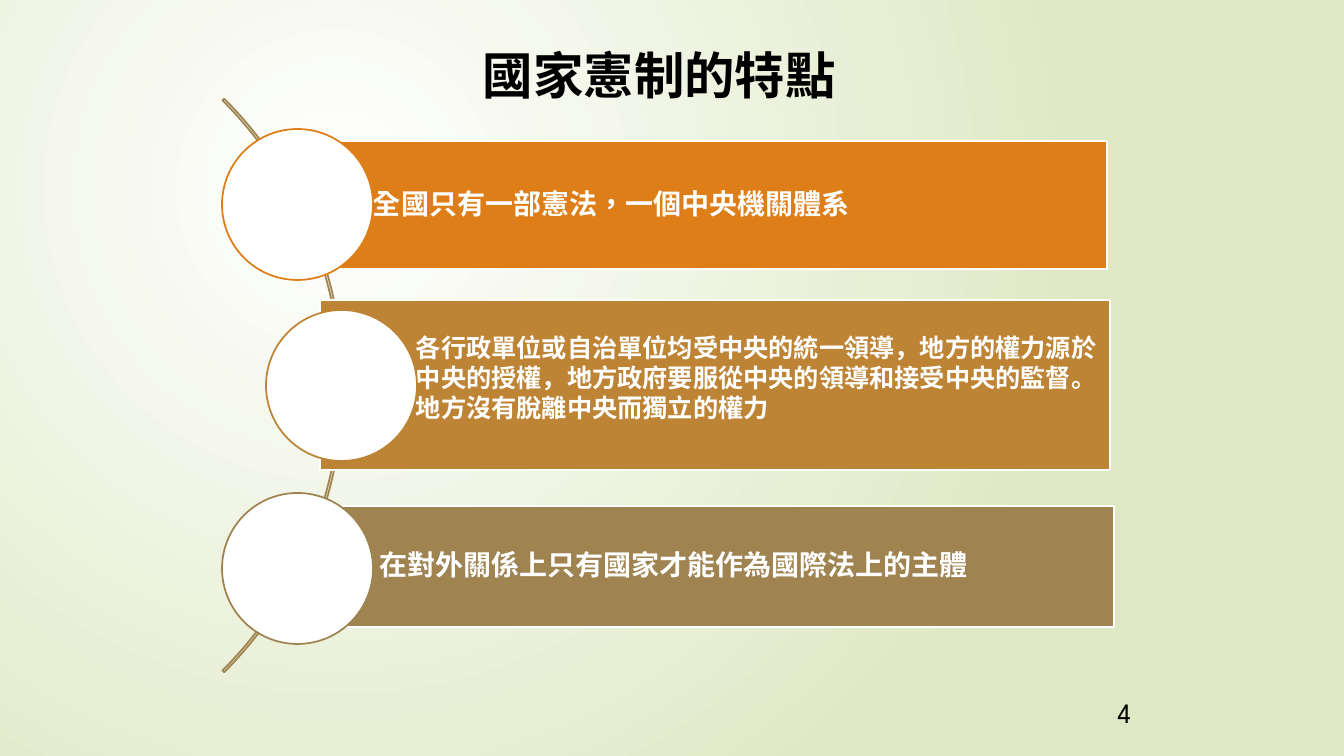
from dataclasses import dataclass
from lxml import etree
from pptx import Presentation
from pptx import util as u
from pptx.dml.color import RGBColor
from pptx.enum import lang, shapes, text
from pptx.oxml.ns import qn

PX = u.Inches(1) / 100.8
TC = lang.MSO_LANGUAGE_ID.TRADITIONAL_CHINESE
SC = lang.MSO_LANGUAGE_ID.SIMPLIFIED_CHINESE
SHAPE = shapes.MSO_SHAPE


@dataclass(frozen=True)
class Theme:
    white: str = "FFFFFF"
    black: str = "000000"
    green: str = "DFE8C4"
    orange: str = "DE7E18"
    ochre: str = "BE8435"
    olive: str = "9F8351"
    body: str = "Calibri"
    digit: str = "League Spartan"
    title: int = 36
    large: int = 20
    small: int = 18
    rule: float = 1.25


T = Theme()

# Bar box, circle corner, colour, type size, line spacing, insets, language, wording
ROWS = [
    ((277, 141, 830, 128), (222, 129), T.orange, T.large, 0.9, (96, 6, 6, 6), TC,
     "全國只有一部憲法，一個中央機關體系"),
    ((320, 300, 790, 170), (266, 310), T.ochre, T.small, 1.0, (96, 5, 5, 20), SC,
     "各行政單位或自治單位均受中央的統一領導，地方的權力源於中央的授權，"
     "地方政府要服從中央的領導和接受中央的監督。地方沒有脫離中央而獨立的權力"),
    ((270, 506, 844, 121), (222, 493), T.olive, T.large, 0.9, (109, 6, 6, 6), TC,
     "在對外關係上只有國家才能作為國際法上的主體"),
]


def px(*nums):
    return [u.Emu(round(n * PX)) for n in nums]


def rgb(tone):
    return RGBColor.from_string(tone)


def write(para, words, size, tone, face=T.body, bold=True, tongue=TC):
    run = para.add_run()
    run.text = words
    font = run.font
    font.name, font.size, font.bold = face, u.Pt(size), bold
    font.color.rgb = rgb(tone)
    font.language_id = tongue


def draw(slide, kind, box, line, fill=None):
    item = slide.shapes.add_shape(kind, *px(*box))
    item.shadow.inherit = False
    item.line.color.rgb = rgb(line)
    item.line.width = u.Pt(T.rule)
    if fill:
        item.fill.solid()
        item.fill.fore_color.rgb = rgb(fill)
    else:
        item.fill.background()
    return item


def backdrop(slide):
    fill = slide.background.fill
    fill.gradient()
    for stop, tone in zip(fill.gradient_stops, (T.white, T.green)):
        stop.color.rgb = rgb(tone)
    # Round gradient, centred in the upper left
    grad = slide.element.find(".//" + qn("a:gradFill"))
    grad.remove(grad.find(qn("a:lin")))
    ring = etree.SubElement(grad, qn("a:path"), path="circle")
    etree.SubElement(ring, qn("a:fillToRect"),
                     l="50000", t="50000", r="100000", b="100000")


def heading(slide, box):
    frame = slide.shapes.add_textbox(*px(*box)).text_frame
    frame.word_wrap = False
    frame.auto_size = text.MSO_AUTO_SIZE.SHAPE_TO_FIT_TEXT
    write(frame.paragraphs[0], "國家憲制的特點", T.title, T.black)


def number(slide, box):
    frame = slide.shapes.add_textbox(*px(*box)).text_frame
    frame.word_wrap = True
    frame.vertical_anchor = text.MSO_ANCHOR.MIDDLE
    para = frame.paragraphs[0]
    para.alignment = text.PP_ALIGN.RIGHT
    write(para, "4", T.large, T.black, T.digit, False)


def row(slide, box, spot, tone, size, space, inset, tongue, words):
    # Bar with its wording
    frame = draw(slide, SHAPE.RECTANGLE, box, T.white, tone).text_frame
    frame.word_wrap = True
    frame.vertical_anchor = text.MSO_ANCHOR.MIDDLE
    (frame.margin_left, frame.margin_top,
     frame.margin_right, frame.margin_bottom) = px(*inset)
    para = frame.paragraphs[0]
    para.alignment = text.PP_ALIGN.LEFT
    para.line_spacing = space
    write(para, words, size, T.white, tongue=tongue)
    # Circle over the bar's left end
    draw(slide, SHAPE.OVAL, (*spot, 151, 151), tone, T.white)


def diagram(slide, box):
    # Thin arc behind the rows
    arc = draw(slide, SHAPE.BLOCK_ARC, box, T.olive)
    for i, value in enumerate((189, 27, 0.003)):
        arc.adjustments[i] = value
    for item in ROWS:
        row(slide, *item)


def main():
    deck = Presentation()
    deck.slide_width, deck.slide_height = px(1344, 756)
    slide = deck.slides.add_slide(deck.slide_layouts[6])
    backdrop(slide)
    heading(slide, (473, 39, 377, 72))
    number(slide, (1077, 692, 64, 40))
    diagram(slide, (-468, -20, 811, 811))
    deck.save("out.pptx")


if __name__ == "__main__":
    main()
